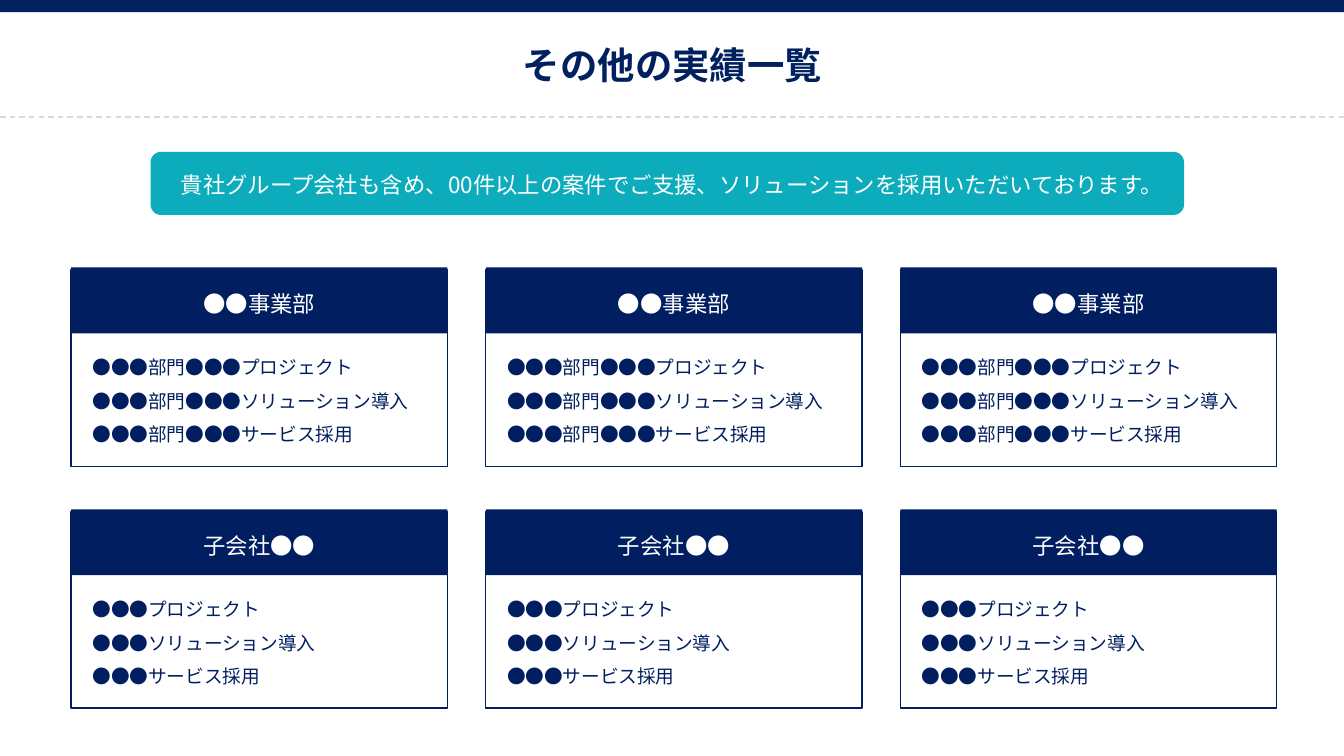
import pptx
import pptx.dml.color
import pptx.enum.dml
import pptx.enum.shapes
import pptx.enum.text
import pptx.oxml.ns
import pptx.util
from lxml import etree

Inches = pptx.util.Inches
Pt = pptx.util.Pt
Shape = pptx.enum.shapes.MSO_SHAPE
Align = pptx.enum.text.PP_ALIGN

COLORS = {
    "white": "FFFFFF",
    "title": "002060",
    "navy": "011F60",
    "teal": "0DACBD",
    "rule": "D9D9D9",
}
FONT = "Noto Sans CJK JP"

SLIDE_WIDTH = 10
SLIDE_HEIGHT = SLIDE_WIDTH * 9 / 16
CARD_LEFT, CARD_RIGHT_LEFT, CARD_WIDTH = 0.53, 6.70, 2.80
CARD_TOP, CARD_PITCH = 1.99, 1.80
CARD_ROWS = [
    ("●●事業部", 2.59, ["●●●部門●●●プロジェクト",
                     "●●●部門●●●ソリューション導入",
                     "●●●部門●●●サービス採用"]),
    ("子会社●●", 1.88, ["●●●プロジェクト",
                     "●●●ソリューション導入",
                     "●●●サービス採用"]),
]


def rgb(name):
    return pptx.dml.color.RGBColor.from_string(COLORS[name])


class SlideBuilder:
    def __init__(self, page):
        self.page = page

    def span(self, para, text, size, color, bold=False):
        """Add one run, naming the font for Latin and East Asian text."""
        span = para.add_run()
        span.text = text
        span.font.size = Pt(size)
        span.font.bold = bold
        span.font.color.rgb = rgb(color)
        span.font.name = FONT
        latin = span.font._element.find(pptx.oxml.ns.qn("a:latin"))
        east_asian = etree.Element(pptx.oxml.ns.qn("a:ea"), typeface=FONT)
        latin.addnext(east_asian)

    def single_line(self, box, text, size, color, bold=False):
        """Centre one unwrapped line in a text box or placeholder."""
        frame = box.text_frame
        frame.auto_size = pptx.enum.text.MSO_AUTO_SIZE.NONE
        frame.word_wrap = False
        frame.vertical_anchor = pptx.enum.text.MSO_ANCHOR.MIDDLE
        para = frame.paragraphs[0]
        para.alignment = Align.CENTER
        self.span(para, text, size, color, bold)

    def title(self, text, left, top, width, height):
        box = self.page.shapes.title
        box.left, box.top = Inches(left), Inches(top)
        box.width, box.height = Inches(width), Inches(height)
        self.single_line(box, text, 20, "title", bold=True)

    def label(self, text, *place):
        box = self.page.shapes.add_textbox(*map(Inches, place))
        self.single_line(box, text, 12, "white")

    def item_list(self, items, *place):
        box = self.page.shapes.add_textbox(*map(Inches, place))
        frame = box.text_frame
        frame.word_wrap = True
        for index, item in enumerate(items):
            para = frame.add_paragraph() if index else frame.paragraphs[0]
            para.alignment = Align.LEFT
            para.line_spacing = Pt(12)
            para.space_after = Pt(6)
            self.span(para, item, 10, "navy")

    def panel(self, kind, fill, *place, line=None):
        shape = self.page.shapes.add_shape(kind, *map(Inches, place))
        shape.shadow.inherit = False
        shape.fill.solid()
        shape.fill.fore_color.rgb = rgb(fill)
        if line:
            shape.line.color.rgb = rgb(line)
            shape.line.width = Pt(0.75)
        else:
            shape.line.fill.background()

    def dashed_rule(self, top, width):
        rule = self.page.shapes.add_connector(
            pptx.enum.shapes.MSO_CONNECTOR.STRAIGHT,
            Inches(0), Inches(top), Inches(width), Inches(top))
        rule.line.color.rgb = rgb("rule")
        rule.line.width = Pt(0.75)
        rule.line.dash_style = pptx.enum.dml.MSO_LINE.DASH
        etree.SubElement(rule._element.spPr, pptx.oxml.ns.qn("a:effectLst"))

    def card(self, left, top, heading, list_width, items):
        self.panel(Shape.RECTANGLE, "white", left, top + 0.02, CARD_WIDTH, 1.46,
                   line="navy")
        self.panel(Shape.RECTANGLE, "navy", left, top, CARD_WIDTH, 0.49)
        self.label(heading, left + 0.88, top + 0.12, 1.04, 0.30)
        self.item_list(items, left + 0.06, top + 0.61, list_width, 0.77)


def main():
    deck = pptx.Presentation()
    deck.slide_width = Inches(SLIDE_WIDTH)
    deck.slide_height = Inches(SLIDE_HEIGHT)
    title_only = deck.slide_layouts[5]
    builder = SlideBuilder(deck.slides.add_slide(title_only))

    builder.panel(Shape.ROUNDED_RECTANGLE, "teal", 1.12, 1.13, 7.69, 0.47)
    builder.label("貴社グループ会社も含め、00件以上の案件でご支援、ソリューションを採用いただいております。",
                  1.19, 1.22, 7.62, 0.30)
    builder.panel(Shape.RECTANGLE, "title", 0, 0, SLIDE_WIDTH, 0.09)
    builder.title("その他の実績一覧", 3.78, 0.26, 2.45, 0.44)
    builder.dashed_rule(0.87, SLIDE_WIDTH)

    column_pitch = (CARD_RIGHT_LEFT - CARD_LEFT) / 2
    for row, (heading, list_width, items) in enumerate(CARD_ROWS):
        for column in range(3):
            builder.card(CARD_LEFT + column * column_pitch,
                         CARD_TOP + row * CARD_PITCH,
                         heading, list_width, items)

    deck.save("out.pptx")


if __name__ == "__main__":
    main()
